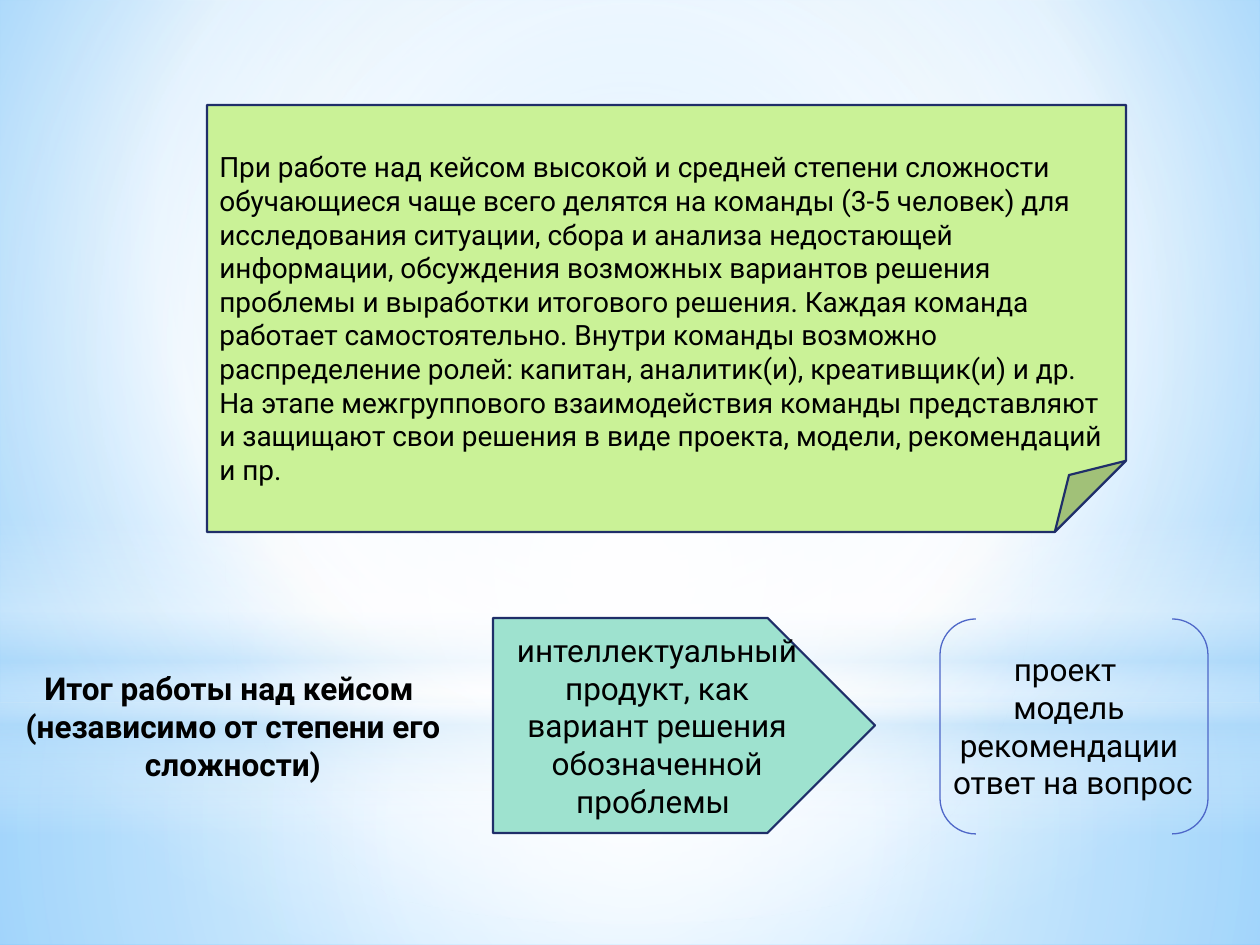
"""Builds the slide on team work over a case and the outcome of that work."""
from dataclasses import dataclass
from typing import Optional

from lxml import etree
from pptx import Presentation
from pptx.dml.color import RGBColor
from pptx.enum.shapes import MSO_SHAPE
from pptx.enum.text import MSO_ANCHOR, PP_ALIGN
from pptx.oxml.ns import qn
from pptx.util import Emu, Pt

RECTANGLE, ELLIPSE = MSO_SHAPE.RECTANGLE, MSO_SHAPE.OVAL
FOLDED_NOTE, ARROW = MSO_SHAPE.FOLDED_CORNER, MSO_SHAPE.PENTAGON
BRACKETS = MSO_SHAPE.DOUBLE_BRACKET
LEFT, CENTER = PP_ALIGN.LEFT, PP_ALIGN.CENTER
TOP, MIDDLE = MSO_ANCHOR.TOP, MSO_ANCHOR.MIDDLE
PX_PER_INCH = 126
SLIDE_WIDTH, SLIDE_HEIGHT = 1260, 945


@dataclass(frozen=True)
class Theme:
    """Colours, type sizes and line widths."""
    font: str = "Roboto"
    text: str = "000000"
    note: str = "CAF297"
    product: str = "9EE2CF"
    outline: str = "1F2E69"
    bracket: str = "4E67C8"
    white: str = "FFFFFF"
    haze: str = "B4DCFA"
    sky: str = "9ED5FF"
    deep_sky: str = "5BB9FF"
    note_size: float = 16
    result_size: float = 18
    outline_width: float = 1.25
    bracket_width: float = 0.75


THEME = Theme()


@dataclass(frozen=True)
class Box:
    """Position and size in px."""
    left: int
    top: int
    width: int
    height: int


@dataclass(frozen=True)
class Stop:
    """Gradient stop: position, colour and opacity in percent."""
    position: int
    color: str
    opacity: int = 100


@dataclass(frozen=True)
class Gradient:
    """Circular gradient towards a focus, or a linear one when an angle is set."""
    stops: tuple[Stop, ...]
    focus: tuple[int, int, int, int] = (50, 50, 50, 50)
    angle: Optional[int] = None


@dataclass(frozen=True)
class Glow:
    """Translucent backdrop layer."""
    kind: MSO_SHAPE
    box: Box
    gradient: Gradient


@dataclass(frozen=True)
class Panel:
    """Outlined shape with an optional fill."""
    kind: MSO_SHAPE
    box: Box
    fill: Optional[str]
    line: str
    line_width: float


@dataclass(frozen=True)
class Copy:
    """Paragraphs and their formatting."""
    paragraphs: tuple[str, ...]
    size: float = THEME.result_size
    bold: bool = False
    align: PP_ALIGN = CENTER
    anchor: MSO_ANCHOR = MIDDLE
    top_inset: int = 6


SKY = Gradient((Stop(0, THEME.sky), Stop(60, THEME.white), Stop(100, THEME.deep_sky)),
               focus=(20, 10, 20, 60))
GLOWS = (
    Glow(RECTANGLE, Box(0, 703, SLIDE_WIDTH, 242), Gradient((
        Stop(0, THEME.white, 91), Stop(37, THEME.white, 76), Stop(100, THEME.haze, 79)))),
    Glow(RECTANGLE, Box(0, 0, SLIDE_WIDTH, 703), Gradient((
        Stop(0, THEME.white, 89), Stop(48, THEME.white, 62), Stop(100, THEME.haze, 79)))),
    Glow(RECTANGLE, Box(0, 519, SLIDE_WIDTH, 315), Gradient((
        Stop(0, THEME.white, 0), Stop(29, THEME.white, 30), Stop(45, THEME.haze, 40),
        Stop(55, THEME.white, 26), Stop(65, THEME.haze, 60), Stop(100, THEME.white, 0)),
        angle=90)),
    Glow(ELLIPSE, Box(0, 221, SLIDE_WIDTH, 703), Gradient((
        Stop(0, THEME.white), Stop(56, THEME.white, 0)))),
)

TEAMWORK_PANEL = Panel(FOLDED_NOTE, Box(207, 105, 919, 427), THEME.note,
                       THEME.outline, THEME.outline_width)
PRODUCT_PANEL = Panel(ARROW, Box(493, 618, 382, 215), THEME.product,
                      THEME.outline, THEME.outline_width)
FORMS_PANEL = Panel(BRACKETS, Box(940, 619, 268, 215), None,
                    THEME.bracket, THEME.bracket_width)

TEAMWORK = Copy((
    "При работе над кейсом высокой и средней степени сложности обучающиеся чаще всего "
    "делятся на команды (3-5 человек) для исследования ситуации, сбора и анализа "
    "недостающей информации, обсуждения возможных вариантов решения проблемы и выработки "
    "итогового решения. Каждая команда работает самостоятельно. Внутри команды возможно "
    "распределение ролей: капитан, аналитик(и), креативщик(и) и др. На этапе "
    "межгруппового взаимодействия команды представляют и защищают свои решения в виде "
    "проекта, модели, рекомендаций и пр.",),
    size=THEME.note_size, align=LEFT, anchor=TOP, top_inset=45)
OUTCOME = Copy(("Итог работы над кейсом ", "(независимо от степени его сложности)"),
               bold=True, anchor=TOP)
PRODUCT = Copy(("интеллектуальный продукт, как вариант решения обозначенной проблемы ",))
FORMS = Copy(("проект ", "модель", "рекомендации", " ответ на вопрос"), anchor=TOP)


def px(length: int) -> Emu:
    """Turn px into EMU."""
    return Emu(round(length * 914400 / PX_PER_INCH))


def place(box: Box) -> tuple[Emu, Emu, Emu, Emu]:
    """Return the box as EMU arguments."""
    return px(box.left), px(box.top), px(box.width), px(box.height)


def paint_gradient(fill, owner, gradient: Gradient) -> None:
    """Give the owner element a gradient with opacity and direction."""
    fill.gradient()
    grad = next(owner.iter(qn("a:gradFill")))
    for child in list(grad):
        grad.remove(child)
    stop_list = etree.SubElement(grad, qn("a:gsLst"))
    for stop in gradient.stops:
        mark = etree.SubElement(stop_list, qn("a:gs"), pos=str(stop.position * 1000))
        color = etree.SubElement(mark, qn("a:srgbClr"), val=stop.color)
        if stop.opacity < 100:
            etree.SubElement(color, qn("a:alpha"), val=str(stop.opacity * 1000))
    if gradient.angle is not None:
        etree.SubElement(grad, qn("a:lin"), ang=str(gradient.angle * 60000), scaled="0")
        return
    direction = etree.SubElement(grad, qn("a:path"), path="circle")
    edges = {side: str(value * 1000) for side, value in zip("ltrb", gradient.focus)}
    etree.SubElement(direction, qn("a:fillToRect"), edges)


def draw_glow(slide, glow: Glow) -> None:
    """Draw one backdrop layer."""
    layer = slide.shapes.add_shape(glow.kind, *place(glow.box))
    layer.shadow.inherit = False
    layer.line.fill.background()
    paint_gradient(layer.fill, layer._element.spPr, glow.gradient)


def draw_panel(slide, panel: Panel):
    """Draw an outlined shape and return it."""
    shape = slide.shapes.add_shape(panel.kind, *place(panel.box))
    shape.shadow.inherit = False
    if panel.fill:
        shape.fill.solid()
        shape.fill.fore_color.rgb = RGBColor.from_string(panel.fill)
    else:
        shape.fill.background()
    shape.line.color.rgb = RGBColor.from_string(panel.line)
    shape.line.width = Pt(panel.line_width)
    return shape


def write(shape, copy: Copy) -> None:
    """Write the paragraphs into a shape."""
    frame = shape.text_frame
    frame.word_wrap = True
    frame.vertical_anchor = copy.anchor
    frame.margin_top = px(copy.top_inset)
    for index, wording in enumerate(copy.paragraphs):
        paragraph = frame.add_paragraph() if index else frame.paragraphs[0]
        paragraph.alignment = copy.align
        run = paragraph.add_run()
        run.text = wording
        run.font.name = THEME.font
        run.font.size = Pt(copy.size)
        run.font.bold = copy.bold
        run.font.color.rgb = RGBColor.from_string(THEME.text)


def main() -> None:
    """Build and save the slide."""
    deck = Presentation()
    deck.slide_width, deck.slide_height = px(SLIDE_WIDTH), px(SLIDE_HEIGHT)
    slide = deck.slides.add_slide(deck.slide_layouts[6])
    paint_gradient(slide.background.fill, slide._element, SKY)
    for glow in GLOWS:
        draw_glow(slide, glow)
    write(draw_panel(slide, TEAMWORK_PANEL), TEAMWORK)
    write(slide.shapes.add_textbox(*place(Box(0, 663, 466, 127))), OUTCOME)
    write(draw_panel(slide, PRODUCT_PANEL), PRODUCT)
    draw_panel(slide, FORMS_PANEL)
    write(slide.shapes.add_textbox(*place(Box(901, 644, 336, 165))), FORMS)
    deck.save("out.pptx")


if __name__ == "__main__":
    main()
